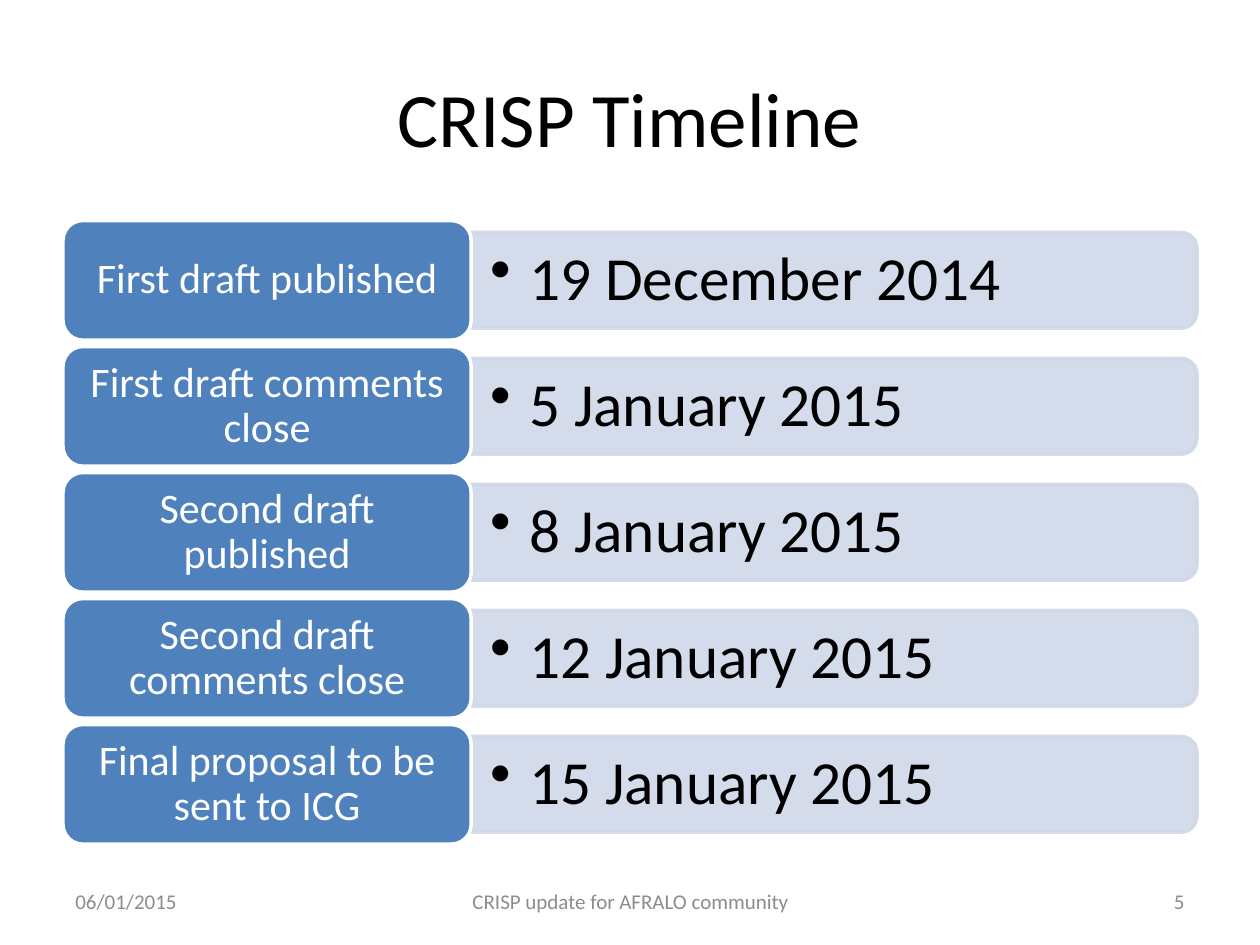
from lxml import etree
from pptx import Presentation
from pptx.dml.color import RGBColor
from pptx.enum.shapes import MSO_SHAPE
from pptx.enum.text import MSO_ANCHOR, PP_ALIGN
from pptx.oxml.ns import qn
from pptx.util import Inches, Pt

LEFT, CENTER, RIGHT = PP_ALIGN.LEFT, PP_ALIGN.CENTER, PP_ALIGN.RIGHT
MIDDLE = MSO_ANCHOR.MIDDLE
ROUNDED, TOP_ROUNDED = MSO_SHAPE.ROUNDED_RECTANGLE, MSO_SHAPE.ROUND_2_SAME_RECTANGLE

FONT = "Calibri"
BLACK, WHITE, GREY = "000000", "FFFFFF", "8C8C8C"
BLUE, PALE_BLUE = "4F81BD", "D0D8E8"

# Slide and row grid, in inches
WIDTH, HEIGHT, MARGIN = 10, 7.5, 0.5
CONTENT_W = WIDTH - 2 * MARGIN
ROWS_TOP, ROW_PITCH = 1.75, 1.0
LABEL_W, LABEL_H = CONTENT_W * 0.36, 0.95
BAR_W, BAR_H = CONTENT_W * 0.64, LABEL_H * 0.8
FOOTER_TOP, FOOTER_H = 6.95, 0.4

MILESTONES = [
    ("First draft published", "19 December 2014"),
    ("First draft comments close", "5 January 2015"),
    ("Second draft published", "8 January 2015"),
    ("Second draft comments close", "12 January 2015"),
    ("Final proposal to be sent to ICG", "15 January 2015"),
]
FOOTERS = [
    ("06/01/2015", MARGIN, 2.33, LEFT),
    ("CRISP update for AFRALO community", 3.42, 3.17, CENTER),
    ("5", 7.17, 2.33, RIGHT),
]


def rgb(value):
    return RGBColor.from_string(value)


def set_alpha(color_format_parent, percent):
    for color in color_format_parent.iter(qn("a:srgbClr")):
        etree.SubElement(color, qn("a:alpha"), val=str(percent * 1000))


def write(shape, text, size=12, color=BLACK, align=LEFT, spacing=None,
          margins=(0.1, 0.05), bullet_indent=None):
    """Fill the shape's text frame with one formatted paragraph."""
    frame = shape.text_frame
    frame.word_wrap = True
    frame.vertical_anchor = MIDDLE
    frame.margin_left = frame.margin_right = Inches(margins[0])
    frame.margin_top = frame.margin_bottom = Inches(margins[1])
    paragraph = frame.paragraphs[0]
    paragraph.alignment = align
    if spacing:
        paragraph.line_spacing = spacing
    if bullet_indent:
        properties = paragraph._p.get_or_add_pPr()
        properties.set("marL", str(Inches(bullet_indent)))
        properties.set("indent", str(-Inches(bullet_indent)))
        etree.SubElement(properties, qn("a:buChar"), char="•")
    run = paragraph.add_run()
    run.text = text
    run.font.name, run.font.size = FONT, Pt(size)
    run.font.color.rgb = rgb(color)


def add_text(slide, box, text, **text_format):
    write(slide.shapes.add_textbox(*map(Inches, box)), text, **text_format)


def add_panel(slide, kind, box, fill, line):
    panel = slide.shapes.add_shape(kind, *map(Inches, box))
    panel.shadow.inherit = False
    panel.fill.solid()
    panel.fill.fore_color.rgb = rgb(fill)
    panel.line.color.rgb = rgb(line)
    panel.line.width = Pt(2)
    return panel


def add_milestone(slide, row, label, date):
    top = ROWS_TOP + row * ROW_PITCH
    middle = top + LABEL_H / 2
    bar_left = MARGIN + LABEL_W

    # Bar: an upright shape turned a quarter so its round corners face right
    bar_box = (bar_left + (BAR_W - BAR_H) / 2, middle - BAR_W / 2, BAR_H, BAR_W)
    bar = add_panel(slide, TOP_ROUNDED, bar_box, PALE_BLUE, PALE_BLUE)
    bar.rotation = 90
    set_alpha(bar._element.spPr, 90)

    # Date on the bar
    date_h = 0.69
    add_text(slide, (bar_left, middle - date_h / 2, BAR_W - 0.04, date_h), date,
             size=35, spacing=0.9, margins=(0.15, 0.07), bullet_indent=0.31)

    # Milestone label
    block = add_panel(slide, ROUNDED, (MARGIN, top, LABEL_W, LABEL_H), BLUE, WHITE)
    write(block, label, size=24, color=WHITE, align=CENTER, spacing=0.9)


def main():
    deck = Presentation()
    deck.slide_width, deck.slide_height = Inches(WIDTH), Inches(HEIGHT)
    slide = deck.slides.add_slide(deck.slide_layouts[6])

    # Title
    add_text(slide, (MARGIN, 0.3, CONTENT_W, 1.25), "CRISP Timeline",
             size=44, align=CENTER)

    # Timeline rows
    for row, (label, date) in enumerate(MILESTONES):
        add_milestone(slide, row, label, date)

    # Footer
    for text, left, width, align in FOOTERS:
        add_text(slide, (left, FOOTER_TOP, width, FOOTER_H), text,
                 color=GREY, align=align)

    deck.save("out.pptx")


if __name__ == "__main__":
    main()
